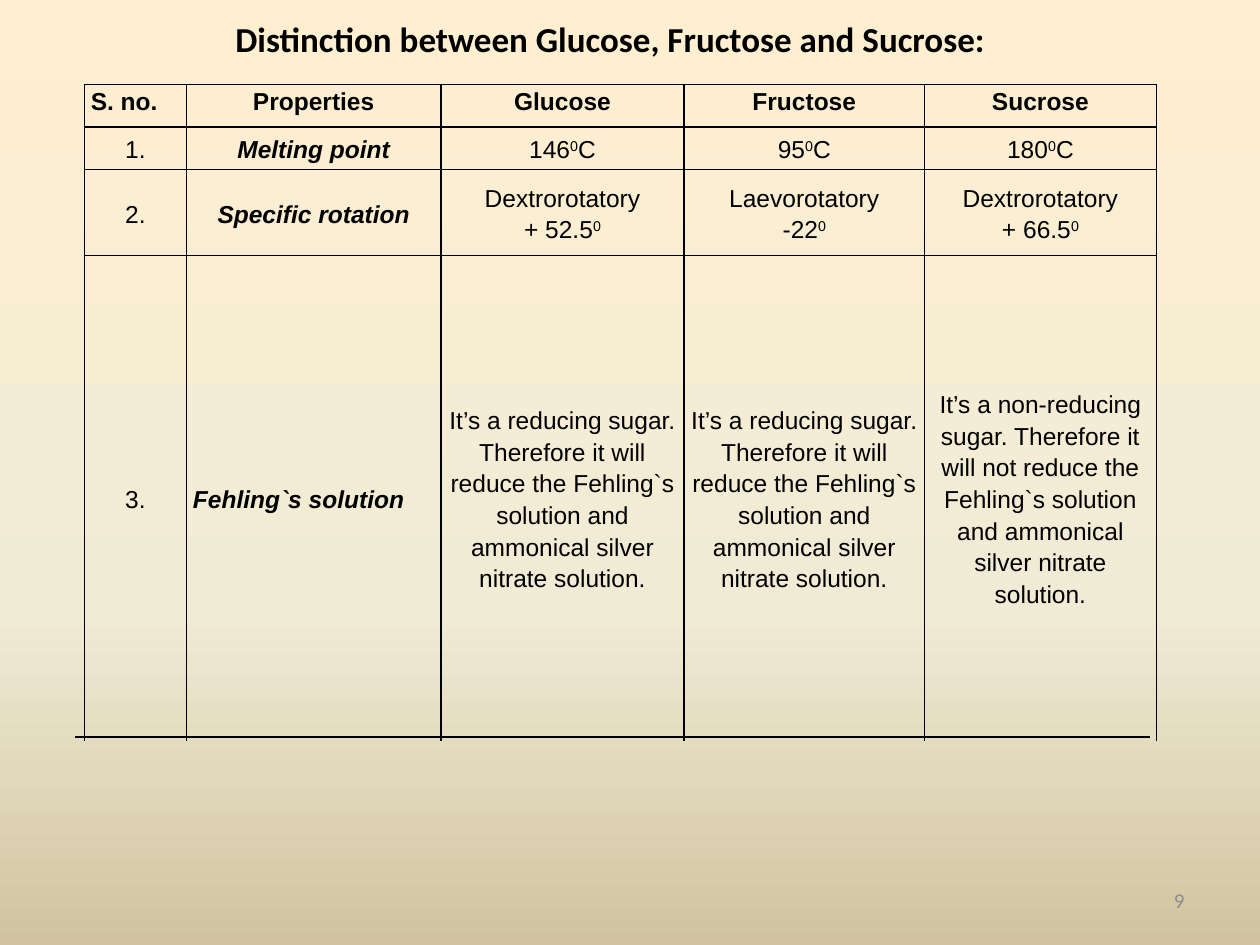
from copy import deepcopy
from dataclasses import dataclass

from lxml import etree
from pptx import Presentation
from pptx import util as u
from pptx.dml.color import RGBColor
from pptx.enum import text
from pptx.oxml.ns import qn

ALIGN = text.PP_ALIGN
MIDDLE = text.MSO_ANCHOR.MIDDLE
INK = "000000"


@dataclass
class Style:
    size: float
    face: str = "Arial"
    hue: str = INK
    bold: bool = False
    slant: bool = False
    align: ALIGN = ALIGN.CENTER


def color(code: str) -> RGBColor:
    return RGBColor.from_string(code)


def format_par(par, style: Style) -> None:
    par.alignment = style.align
    for run in par.runs:
        font = run.font
        font.size, font.name = u.Pt(style.size), style.face
        font.bold, font.italic = style.bold, style.slant
        font.color.rgb = color(style.hue)


def fill_cell(cell, words: str, style: Style) -> None:
    """Write one paragraph per line; parts between ^ marks are raised."""
    frame = cell.text_frame
    for i, line in enumerate(words.split("\n")):
        par = frame.add_paragraph() if i else frame.paragraphs[0]
        for j, part in enumerate(line.split("^")):
            if part:
                run = par.add_run()
                run.text = part
                if j % 2:
                    run.font._element.set("baseline", "30000")
        par.line_spacing = 1.15
        format_par(par, style)


def set_edges(cell, drawn: str) -> None:
    """Draw the named sides (of L, R, T, B) and clear the others."""
    props = cell._tc.get_or_add_tcPr()
    for side in "LRTB":
        line = etree.SubElement(props, qn(f"a:ln{side}"), w=str(u.Pt(1)))
        if side in drawn:
            fill = etree.SubElement(line, qn("a:solidFill"))
            etree.SubElement(fill, qn("a:srgbClr"), val=INK)
        else:
            etree.SubElement(line, qn("a:noFill"))
    cell.fill.background()


def add_grid(slide, left: float, top: float, cols: list, rows: list):
    """Add a plain table with sizes in centimetres."""
    grid = slide.shapes.add_table(
        len(rows), len(cols), u.Cm(left), u.Cm(top),
        u.Cm(sum(cols)), u.Cm(sum(rows))).table
    grid.first_row = grid.horz_banding = False
    for col, wide in zip(grid.columns, cols):
        col.width = u.Cm(wide)
    for row, high in zip(grid.rows, rows):
        row.height = u.Cm(high)
    return grid


def paint_back(slide, stops: list) -> None:
    fill = slide.background.fill
    fill.gradient()
    fill.gradient_angle = 270
    first = slide.element.find(".//" + qn("a:gs"))
    first.addnext(deepcopy(first))
    for stop, (place, code) in zip(fill.gradient_stops, stops):
        stop.position = place
        stop.color.rgb = color(code)


HEAD = Style(14, bold=True)
HEAD_LEFT = Style(14, bold=True, align=ALIGN.JUSTIFY)
BODY = Style(14)
NAME = Style(14, bold=True, slant=True)
NAME_LEFT = Style(14, bold=True, slant=True, align=ALIGN.JUSTIFY)

REDUCES = ("It’s a reducing sugar. Therefore it will reduce the Fehling`s "
           "solution and ammonical silver nitrate solution.")
RESISTS = ("It’s a non-reducing sugar. Therefore it will not reduce the "
           "Fehling`s solution and ammonical silver nitrate solution.")
ROWS = [
    ["S. no.", "Properties", "Glucose", "Fructose", "Sucrose"],
    ["1.", "Melting point", "146^0^C", "95^0^C", "180^0^C"],
    ["2.", "Specific rotation", "Dextrorotatory\n+ 52.5^0^",
     "Laevorotatory\n-22^0^", "Dextrorotatory\n+ 66.5^0^"],
    ["3.", "Fehling`s solution", REDUCES, REDUCES, RESISTS],
]
STYLES = [
    [HEAD_LEFT] + [HEAD] * 4,
    [BODY, NAME] + [BODY] * 3,
    [BODY, NAME] + [BODY] * 3,
    [BODY, NAME_LEFT] + [BODY] * 3,
]


def main() -> None:
    deck = Presentation()
    deck.slide_width, deck.slide_height = u.Cm(25.4), u.Cm(19.05)
    slide = deck.slides.add_slide(deck.slide_layouts[5])
    paint_back(slide, [(0, "FFEFD1"), (0.65, "F0EBD5"), (1, "D1C39F")])

    # Title
    title = slide.shapes.title
    title.left, title.top = u.Cm(1.27), u.Cm(0)
    title.width, title.height = u.Cm(22.23), u.Cm(1.57)
    title.text_frame.text = "Distinction between Glucose, Fructose and Sucrose: "
    title.text_frame.vertical_anchor = MIDDLE
    format_par(title.text_frame.paragraphs[0], Style(20, "Calibri", bold=True))

    # Sugar table, with an open row at the foot
    grid = add_grid(slide, 1.7, 1.7, [2.06, 5.13, 4.9, 4.85, 4.67],
                    [0.86, 0.86, 1.73, 9.78, 2.84])
    last = len(ROWS) - 1
    for r, (words, styles) in enumerate(zip(ROWS, STYLES)):
        for c, (word, style) in enumerate(zip(words, styles)):
            cell = grid.cell(r, c)
            cell.margin_left = cell.margin_right = u.Cm(0.13)
            cell.margin_top = cell.margin_bottom = 0
            if r:
                cell.vertical_anchor = MIDDLE
            fill_cell(cell, word, style)
            set_edges(cell, "LRT" if r == last else "LRTB")
    foot = len(ROWS)
    for c in range(len(grid.columns)):
        set_edges(grid.cell(foot, c), "")
    grid.cell(foot, 0).merge(grid.cell(foot, len(grid.columns) - 1))

    # Slide number
    box = slide.shapes.add_textbox(u.Cm(18.2), u.Cm(17.65), u.Cm(5.93), u.Cm(1.01))
    frame = box.text_frame
    frame.word_wrap = True
    frame.vertical_anchor = MIDDLE
    frame.text = "9"
    format_par(frame.paragraphs[0],
               Style(12, "Calibri", "8C8C8C", align=ALIGN.RIGHT))

    # Closing rule: a one-cell table with a top edge
    rule = add_grid(slide, 1.52, 14.86, [21.67], [0.38])
    set_edges(rule.cell(0, 0), "T")

    deck.save("out.pptx")


if __name__ == "__main__":
    main()
